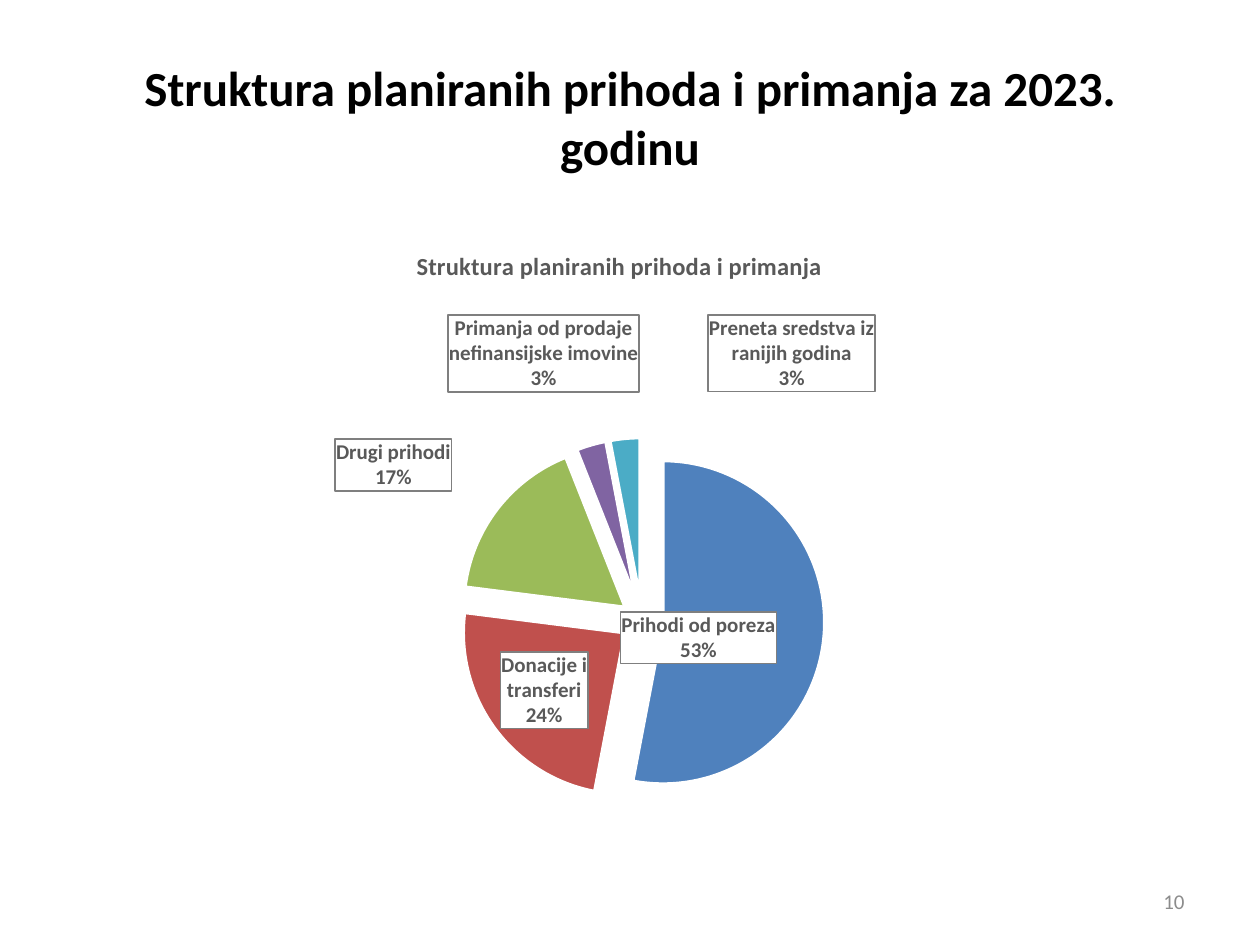
from copy import deepcopy

from lxml import etree
from pptx import Presentation
from pptx.chart.data import CategoryChartData
from pptx.dml.color import RGBColor
from pptx.enum import chart as ch, text
from pptx.oxml import parse_xml
from pptx.oxml.ns import nsdecls, qn
from pptx.util import Inches, Pt

FONT = "Calibri"
BLACK = RGBColor(0x00, 0x00, 0x00)
WHITE = RGBColor(0xFF, 0xFF, 0xFF)
GREY = RGBColor(0x59, 0x59, 0x59)
PALE = RGBColor(0x8C, 0x8C, 0x8C)
EDGE = RGBColor(0x7F, 0x7F, 0x7F)
BLUE = RGBColor(0x4F, 0x81, 0xBD)
RED = RGBColor(0xC0, 0x50, 0x4D)
GREEN = RGBColor(0x9B, 0xBB, 0x59)
PURPLE = RGBColor(0x80, 0x64, 0xA2)
TEAL = RGBColor(0x4B, 0xAC, 0xC6)

# Category, share, colour, label shift as a fraction of the chart
SHARES = [
    ("Prihodi od poreza", 53, BLUE, (-0.21, -0.04)),
    ("Donacije i transferi", 24, RED, None),
    ("Drugi prihodi", 17, GREEN, (-0.04, -0.02)),
    ("Primanja od prodaje nefinansijske imovine", 3, PURPLE, (0.05, -0.07)),
    ("Preneta sredstva iz ranijih godina", 3, TEAL, (0.25, -0.06)),
]


def style(font, size, color, bold=False):
    font.name, font.size, font.bold = FONT, Pt(size), bold
    font.color.rgb = color


def layout(**parts):
    """Return a manual chart layout with the given parts, in schema order."""
    body = "".join(f'<c:{k} val="{v}"/>' for k, v in parts.items())
    return parse_xml(f'<c:layout {nsdecls("c")}><c:manualLayout>{body}'
                     '</c:manualLayout></c:layout>')


def place(owner, index, new):
    """Put a layout into a chart element, replacing any it has."""
    for old in owner.findall(qn("c:layout")):
        owner.remove(old)
    owner.insert(index, new)


def add_title(slide, words):
    title = slide.shapes.title
    title.left, title.top = Inches(0.5), Inches(0.3)
    title.width, title.height = Inches(9), Inches(1.25)
    frame = title.text_frame
    frame.text = words
    frame.vertical_anchor = text.MSO_ANCHOR.MIDDLE
    para = frame.paragraphs[0]
    para.alignment = text.PP_ALIGN.CENTER
    style(para.runs[0].font, 28, BLACK, True)


def add_number(slide, words):
    box = slide.shapes.add_textbox(
        Inches(7.17), Inches(6.95), Inches(2.33), Inches(0.4))
    frame = box.text_frame
    frame.word_wrap = True
    frame.vertical_anchor = text.MSO_ANCHOR.MIDDLE
    frame.text = words
    para = frame.paragraphs[0]
    para.alignment = text.PP_ALIGN.RIGHT
    style(para.runs[0].font, 12, PALE)


def add_labels(series):
    """Give the slices boxed labels and shift those that have an offset."""
    labels = series.data_labels
    labels.show_value = False
    labels.show_percentage = labels.show_category_name = True
    labels.number_format, labels.number_format_is_linked = "0%", False
    labels.position = ch.XL_LABEL_POSITION.BEST_FIT
    style(labels.font, 12, GREY, True)
    root = labels._element
    lead = root.find(qn("c:showLeaderLines"))
    if lead is not None:
        lead.set("val", "0")
    root.find(qn("c:txPr")).addprevious(parse_xml(
        f'<c:spPr {nsdecls("c", "a")}>'
        f'<a:solidFill><a:srgbClr val="{WHITE}"/></a:solidFill>'
        f'<a:ln w="{Pt(1)}"><a:solidFill><a:srgbClr val="{EDGE}"/>'
        '</a:solidFill></a:ln></c:spPr>'))
    shared = [part for part in root if part is not lead]
    spot = 0
    for index, (_, _, _, shift) in enumerate(SHARES):
        if shift is None:
            continue
        label = etree.Element(qn("c:dLbl"))
        etree.SubElement(label, qn("c:idx")).set("val", str(index))
        label.append(layout(x=shift[0], y=shift[1]))
        label.extend(deepcopy(part) for part in shared)
        root.insert(spot, label)
        spot += 1


def add_pie(slide, words):
    data = CategoryChartData(number_format="#,##0")
    data.categories = [row[0] for row in SHARES]
    data.add_series("Series 1", [row[1] for row in SHARES])
    chart = slide.shapes.add_chart(
        ch.XL_CHART_TYPE.PIE, Inches(0.88), Inches(1.73),
        Inches(7.97), Inches(5.22), data).chart
    style(chart.font, 10, BLACK)
    chart.has_legend = False

    title = chart.chart_title
    title.text_frame.text = words
    style(title.text_frame.paragraphs[0].runs[0].font, 14, GREY, True)
    title.include_in_layout = False
    place(title._element, 1,
          layout(xMode="edge", yMode="edge", x=0.3, y=0.04))
    area = chart._chartSpace.find(".//" + qn("c:plotArea"))
    place(area, 0, layout(layoutTarget="inner", xMode="edge", yMode="edge",
                          x=0.215, y=0.334, w=0.628, h=0.556))

    plot = chart.plots[0]
    plot.vary_by_categories = True
    series = plot.series[0]
    for index, (_, _, color, _) in enumerate(SHARES):
        form = series.points[index].format
        form.fill.solid()
        form.fill.fore_color.rgb = color
        form.line.color.rgb = WHITE
        form.line.width = Pt(2)
    burst = etree.Element(qn("c:explosion"))
    burst.set("val", "13")
    series._element.find(qn("c:dPt")).addprevious(burst)
    add_labels(series)


def main():
    deck = Presentation()
    deck.slide_width, deck.slide_height = Inches(10), Inches(7.5)
    slide = deck.slides.add_slide(deck.slide_layouts[5])
    add_title(slide, "Struktura planiranih prihoda i primanja za 2023. godinu")
    add_number(slide, "10")
    add_pie(slide, "Struktura planiranih prihoda i primanja")
    deck.save("out.pptx")


if __name__ == "__main__":
    main()
